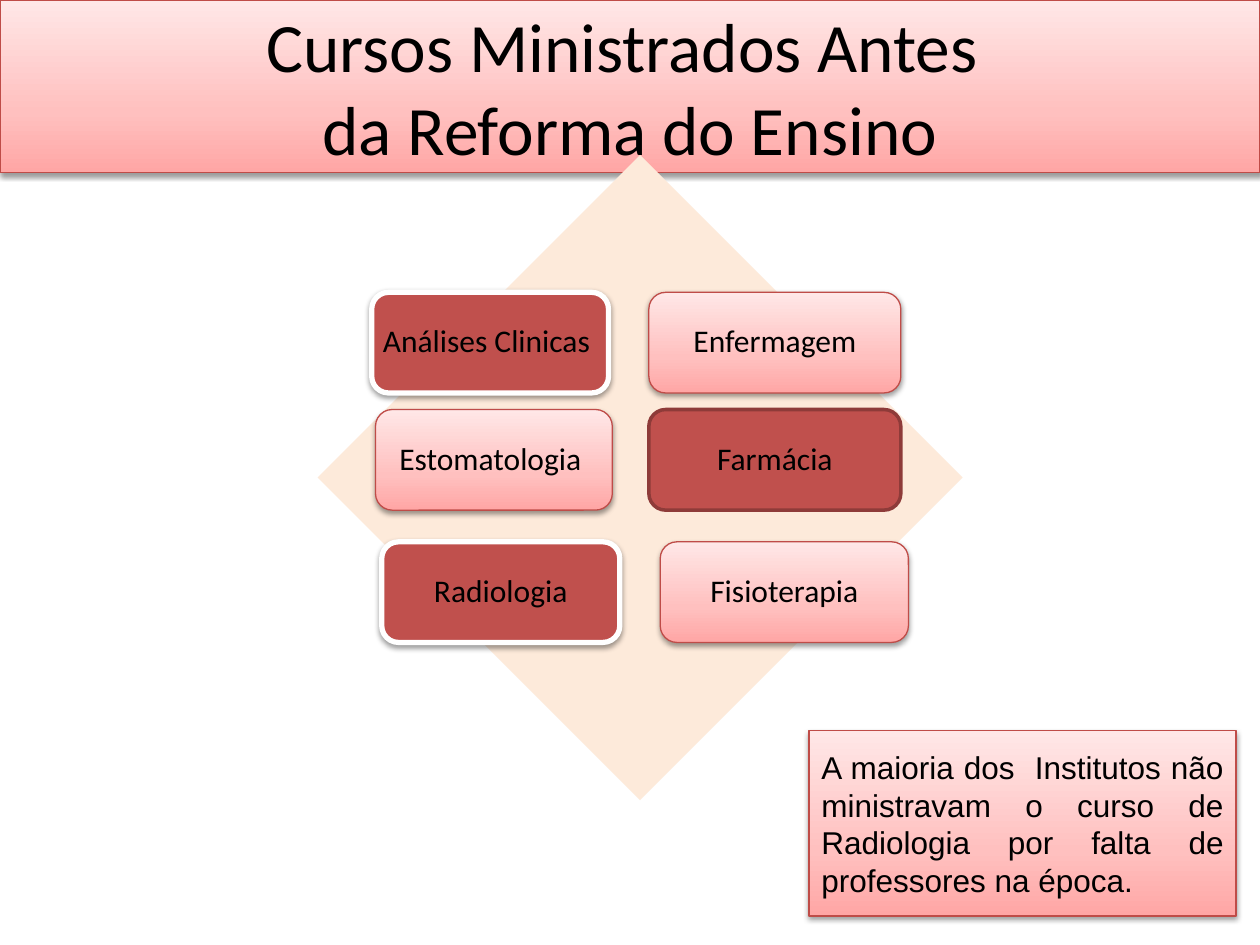
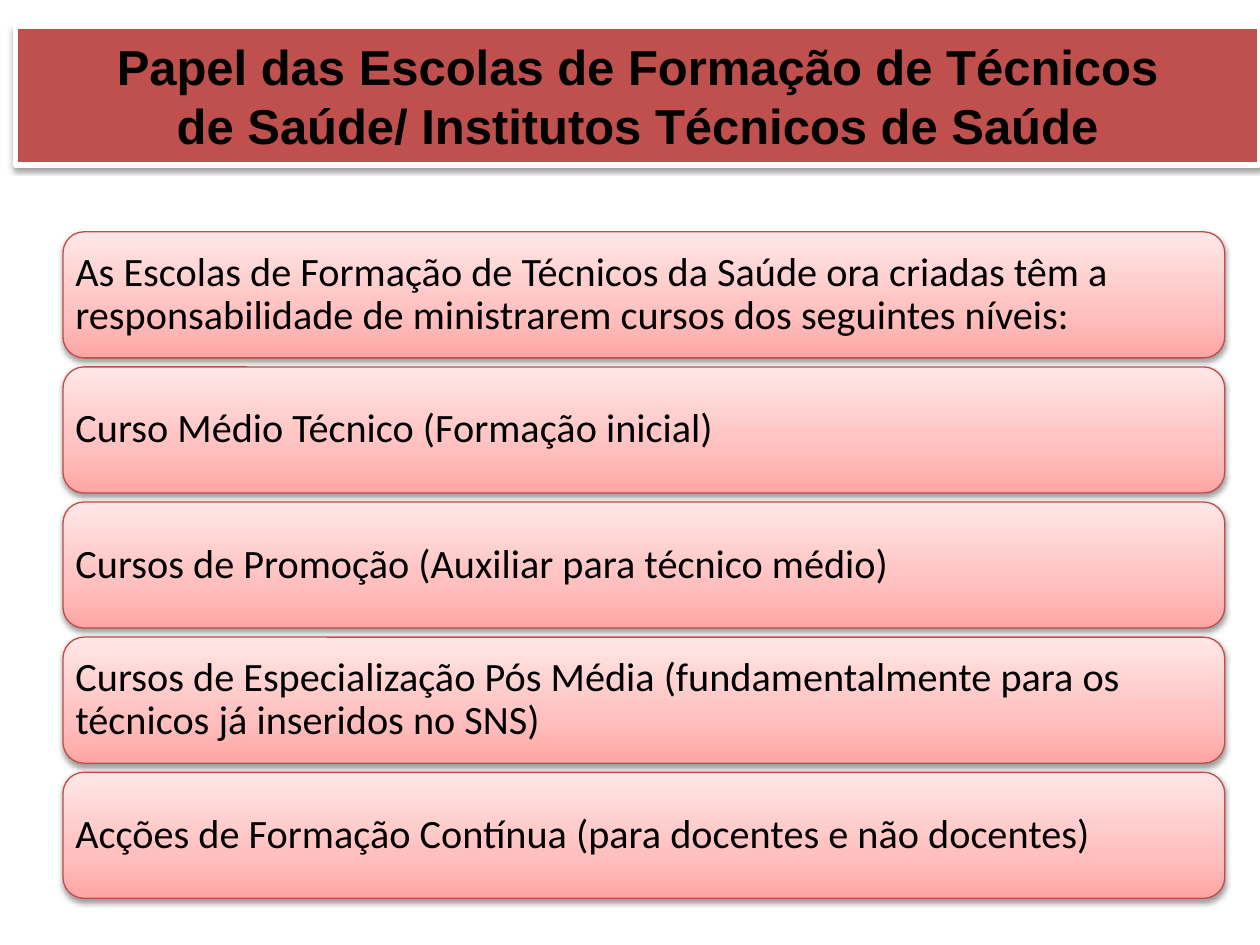
from dataclasses import dataclass

from lxml import etree
from pptx import Presentation
from pptx import util as u
from pptx.dml import color
from pptx.enum import shapes, text
from pptx.oxml import ns


@dataclass(frozen=True)
class Look:
    fill: str
    line: str
    width: float
    shade: bool = True


class Theme:
    ink = "000000"
    sand = "FDEADA"
    blush = ((0, "FFA6A5"), (35, "FFC0BF"), (100, "FFE7E7"))
    soft = Look("", "BF4C48", 0.75)
    bold = Look("C0504D", "FFFFFF", 3)
    deep = Look("C0504D", "8E3B39", 2, False)
    sans = "Calibri"
    plain = "Arial"
    head = 39.6
    sub = 28
    list = 23
    small = 18


@dataclass(frozen=True)
class Box:
    x: float
    y: float
    w: float
    h: float

    def share(self, x, y, w, h):
        return Box(self.x + self.w * x / 100, self.y + self.h * y / 100,
                   self.w * w / 100, self.h * h / 100)

    def rows(self, count, gap):
        high = (100 - gap * (count - 1)) / count
        return [self.share(0, i * (high + gap), 100, high) for i in range(count)]

    def place(self, item):
        item.left, item.top = u.Inches(self.x), u.Inches(self.y)
        item.width, item.height = u.Inches(self.w), u.Inches(self.h)


PAGE = Box(0, 0, 10, 7.5)
ALIGN = text.PP_ALIGN
KIND = shapes.MSO_SHAPE


def rgb(code):
    return color.RGBColor.from_string(code)


def blend(item):
    item.fill.gradient()
    item.fill.gradient_angle = 90
    stops = item._element.spPr.find(".//" + ns.qn("a:gsLst"))
    for old in list(stops):
        stops.remove(old)
    for pos, code in Theme.blush:
        stop = etree.SubElement(stops, ns.qn("a:gs"), pos=str(pos * 1000))
        etree.SubElement(stop, ns.qn("a:srgbClr"), val=code)


def shade(item):
    effect = item._element.spPr.find(ns.qn("a:effectLst"))
    outer = etree.SubElement(effect, ns.qn("a:outerShdw"), blurRad="40000",
                             dist="20000", dir="5400000", rotWithShape="0")
    tint = etree.SubElement(outer, ns.qn("a:srgbClr"), val="000000")
    etree.SubElement(tint, ns.qn("a:alpha"), val="38000")


def paint(item, look):
    item.shadow.inherit = False
    if look.fill:
        item.fill.solid()
        item.fill.fore_color.rgb = rgb(look.fill)
    else:
        blend(item)
    item.line.color.rgb = rgb(look.line)
    item.line.width = u.Pt(look.width)
    if look.shade:
        shade(item)


def write(item, words, size, font=Theme.sans, align=ALIGN.CENTER,
          bold=False, pad=0.1, lead=1.0):
    frame = item.text_frame
    frame.text = words
    frame.word_wrap = True
    frame.auto_size = text.MSO_AUTO_SIZE.NONE
    frame.vertical_anchor = text.MSO_ANCHOR.MIDDLE
    frame.margin_left = frame.margin_right = u.Inches(pad)
    frame.margin_top = frame.margin_bottom = u.Inches(0.05)
    para = frame.paragraphs[0]
    para.alignment = align
    para.line_spacing = lead
    for run in para.runs:
        run.font.name = font
        run.font.size = u.Pt(size)
        run.font.bold = bold
        run.font.color.rgb = rgb(Theme.ink)
    for gap in para._p.findall(ns.qn("a:br")):
        etree.SubElement(gap, ns.qn("a:rPr"), sz=str(round(size * 100)))


def draw(slide, kind, box):
    item = slide.shapes.add_shape(kind, 0, 0, 0, 0)
    box.place(item)
    return item


def title(slide, box, words, look, size, **style):
    item = slide.shapes.title
    box.place(item)
    paint(item, look)
    write(item, words, size, **style)


def card(slide, box, words, look, size, kind=KIND.ROUNDED_RECTANGLE, **style):
    item = draw(slide, kind, box)
    paint(item, look)
    write(item, words, size, **style)


def matrix(slide, box, rows):
    back = draw(slide, KIND.DIAMOND, box)
    back.shadow.inherit = False
    back.fill.solid()
    back.fill.fore_color.rgb = rgb(Theme.sand)
    back.line.fill.background()
    for top, cells in rows:
        for left, wide, words, look in cells:
            card(slide, box.share(left, top, wide, 15.6), words, look,
                 Theme.small, pad=0.03, lead=0.9)


def stack(slide, box, items):
    for row, words in zip(box.rows(len(items), 1.36), items):
        card(slide, row, words, Theme.soft, Theme.list,
             align=ALIGN.LEFT, pad=0.05, lead=0.9)


def courses(slide):
    title(slide, PAGE.share(0, 0, 100, 18.27),
          "Cursos Ministrados Antes \vda Reforma do Ensino",
          Theme.soft, Theme.head)
    matrix(slide, PAGE.share(25.2, 16.4, 51.2, 68.27), (
        (21.29, ((8.4, 36.72, "Análises Clinicas ", Theme.bold),
                 (51.37, 39.06, "Enfermagem", Theme.soft))),
        (39.45, ((8.98, 36.72, "Estomatologia ", Theme.soft),
                 (51.37, 39.06, "Farmácia", Theme.deep))),
        (59.96, ((9.96, 36.91, "Radiologia", Theme.bold),
                 (53.13, 38.48, "Fisioterapia", Theme.soft))),
    ))
    card(slide, PAGE.share(64.2, 77.33, 33.9, 19.6),
         "A maioria dos  Institutos não ministravam o curso de "
         "Radiologia por falta de professores na época.",
         Theme.soft, Theme.small, kind=KIND.RECTANGLE,
         font=Theme.plain, align=ALIGN.JUSTIFY)


def roles(slide):
    title(slide, PAGE.share(1.2, 2.8, 98.8, 14.67),
          " Papel das Escolas de Formação de Técnicos \v"
          "de Saúde/ Institutos Técnicos de Saúde",
          Theme.bold, Theme.sub, font=Theme.plain, bold=True)
    stack(slide, PAGE.share(5, 24.53, 92.2, 70.53), (
        "As Escolas de Formação de Técnicos da Saúde ora criadas têm a "
        "responsabilidade de ministrarem cursos dos seguintes níveis:",
        "Curso Médio Técnico (Formação inicial)",
        "Cursos de Promoção (Auxiliar para técnico médio)",
        "Cursos de Especialização Pós Média (fundamentalmente para os "
        "técnicos já inseridos no SNS)",
        "Acções de Formação Contínua (para docentes e não docentes)",
    ))


def main():
    deck = Presentation()
    deck.slide_width, deck.slide_height = u.Inches(PAGE.w), u.Inches(PAGE.h)
    for build in (courses, roles):
        build(deck.slides.add_slide(deck.slide_layouts[5]))
    deck.save("out.pptx")


if __name__ == "__main__":
    main()
